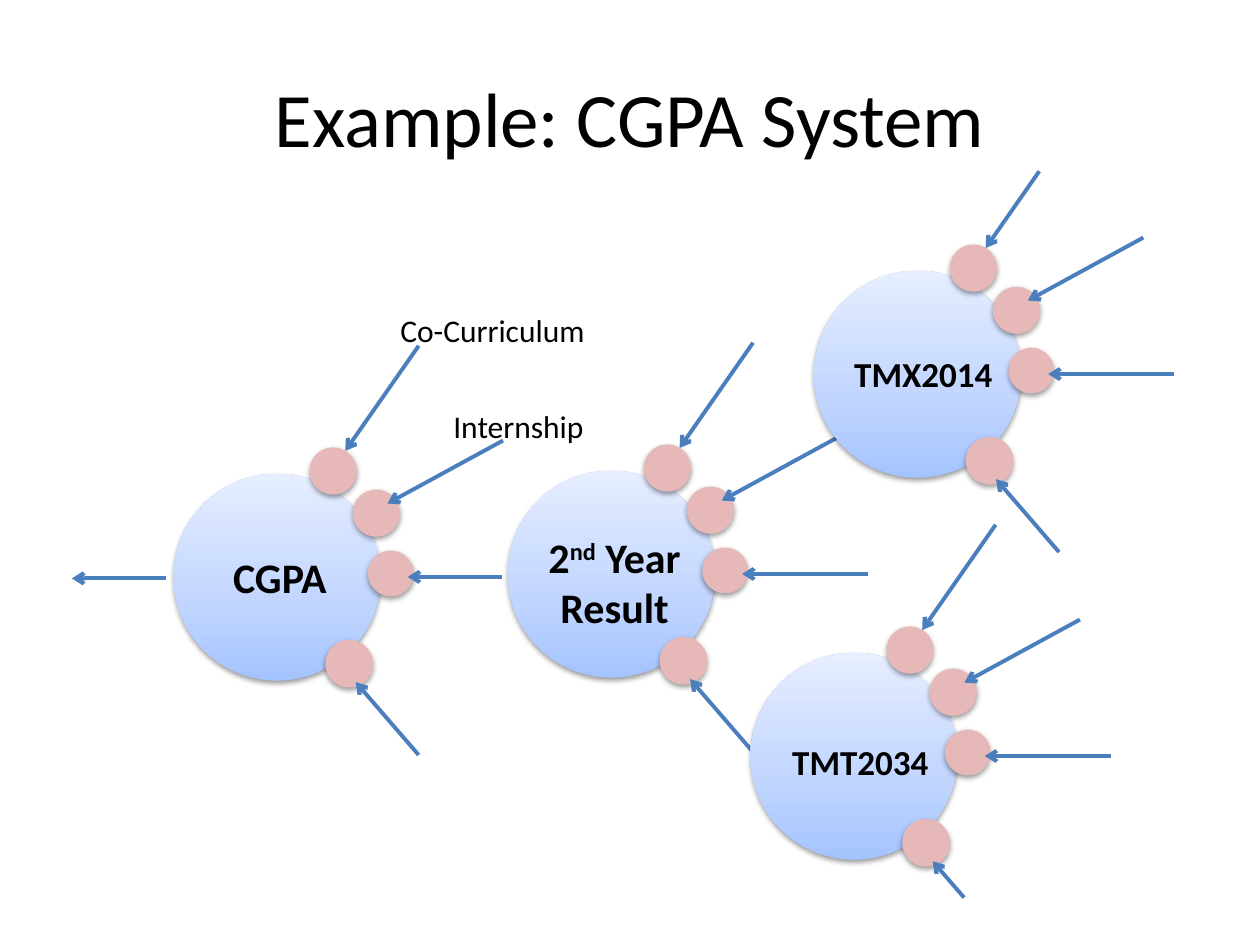
from copy import deepcopy

from lxml.etree import SubElement
from pptx import Presentation
from pptx.dml.color import RGBColor
from pptx.enum.shapes import MSO_CONNECTOR, MSO_SHAPE
from pptx.enum.text import MSO_ANCHOR, PP_ALIGN
from pptx.oxml.ns import qn
from pptx.util import Cm, Pt

COLOURS = {
    "text": "000000",
    "arrow": "4B7EBC",
    "port": "E6B9B8",
    "node_bottom": "A4C4FF",
    "node_middle": "BFD4FF",
    "node_top": "E6EEFF",
    "shadow": "000000",
}
FONT = "Calibri"
NODE_SIZE = 4.17

PORTS = [(2.74, -0.53, 0.95), (3.61, 0.32, 0.95), (3.92, 1.55, 0.92), (3.06, 3.35, 0.96)]
INPUTS = [
    ((3.46, -0.46), (1.48, -2.12)),
    ((4.31, 0.6), (2.33, -1.27)),
    ((4.72, 2.08), (2.54, 0)),
    ((3.67, 4.2), (1.27, 1.47)),
]
NODES = [
    (3.5, 9.55, (1, 1, 0.75, 1)),
    (10.24, 9.49, (1, 1, 1, 1)),
    (15.13, 13.16, (1, 1, 1, 0.5)),
    (16.41, 5.46, (0.73, 1, 1, 1)),
]
LABELS = [
    ((8.89, 8.08, 3.18, 1.02), [["Internship"]], 18, False, PP_ALIGN.LEFT),
    ((4.45, 11, 2.54, 1.27), [["CGPA"]], 24, True, PP_ALIGN.LEFT),
    ((10.59, 10.59, 3.6, 2.31), [["2", "nd", " Year"], ["Result"]], 24, True, PP_ALIGN.CENTER),
    ((16.71, 6.99, 3.81, 1.12), [["TMX2014"]], 20, True, PP_ALIGN.CENTER),
    ((15.44, 14.81, 3.81, 1.12), [["TMT2034"]], 20, True, PP_ALIGN.CENTER),
    ((7.82, 6.15, 4.45, 1.02), [["Co-Curriculum"]], 18, False, PP_ALIGN.LEFT),
]


def colour(name):
    """Return a named colour."""
    return RGBColor.from_string(COLOURS[name])


def add_span(para, text, size, bold=False):
    """Add one formatted run to a paragraph."""
    span = para.add_run()
    span.text = text
    span.font.name = FONT
    span.font.size = Pt(size)
    span.font.bold = bold
    span.font.color.rgb = colour("text")
    return span


def set_title(page, text):
    """Place and fill the title placeholder."""
    title = page.shapes.title
    title.left, title.top, title.width, title.height = Cm(1.27), Cm(0.76), Cm(22.86), Cm(3.18)
    title.text_frame.vertical_anchor = MSO_ANCHOR.MIDDLE
    para = title.text_frame.paragraphs[0]
    para.alignment = PP_ALIGN.CENTER
    add_span(para, text, 44)


def add_shadow(shape):
    """Give a shape a soft shadow straight below it."""
    shape.shadow.inherit = False
    effects = shape._element.spPr.find(qn("a:effectLst"))
    shadow = SubElement(effects, qn("a:outerShdw"), blurRad=str(Pt(3.1)), dist=str(Pt(1.6)),
                        dir="5400000", rotWithShape="0")
    tone = SubElement(shadow, qn("a:srgbClr"), val=COLOURS["shadow"])
    SubElement(tone, qn("a:alpha"), val="38000")


def add_circle(group, left, top, size):
    """Add a circle with a shadow and no outline."""
    circle = group.shapes.add_shape(MSO_SHAPE.OVAL, Cm(left), Cm(top), Cm(size), Cm(size))
    circle.line.fill.background()
    add_shadow(circle)
    return circle


def fill_node(circle):
    """Fill a node with the three-step blue gradient."""
    circle.fill.gradient()
    circle.fill.gradient_angle = 90
    stops = circle._element.spPr.find(qn("a:gradFill")).find(qn("a:gsLst"))
    stops.insert(1, deepcopy(stops[0]))
    steps = [(0, "node_bottom"), (0.35, "node_middle"), (1, "node_top")]
    for stop, (position, name) in zip(circle.fill.gradient_stops, steps):
        stop.position = position
        stop.color.rgb = colour(name)


def add_arrow(group, start, end):
    """Add a straight arrow pointing at its end."""
    arrow = group.shapes.add_connector(MSO_CONNECTOR.STRAIGHT, *map(Cm, start + end))
    arrow.line.color.rgb = colour("arrow")
    arrow.line.width = Pt(2.25)
    properties = arrow._element.spPr
    SubElement(properties.find(qn("a:ln")), qn("a:tailEnd"), type="arrow")
    SubElement(properties, qn("a:effectLst"))


def add_node(page, left, top, scales):
    """Add a grouped node with its ports and incoming arrows."""
    group = page.shapes.add_group_shape()
    fill_node(add_circle(group, left, top, NODE_SIZE))
    for across, down, size in PORTS:
        port = add_circle(group, left + across, top + down, size)
        port.fill.solid()
        port.fill.fore_color.rgb = colour("port")
    for ((across, down), (run, rise)), scale in zip(INPUTS, scales):
        end = (left + across, top + down)
        add_arrow(group, (end[0] + run * scale, end[1] + rise * scale), end)


def add_label(page, place, lines, size, bold, alignment):
    """Add a text box, raising ordinal endings."""
    box = page.shapes.add_textbox(*map(Cm, place))
    frame = box.text_frame
    frame.word_wrap = True
    for number, line in enumerate(lines):
        para = frame.add_paragraph() if number else frame.paragraphs[0]
        para.alignment = alignment
        for text in line:
            span = add_span(para, text, size, bold)
            if text == "nd":
                span._r.get_or_add_rPr().set("baseline", "30000")


def main():
    """Build the CGPA system slide."""
    deck = Presentation()
    deck.slide_width, deck.slide_height = Cm(25.4), Cm(19.05)
    page = deck.slides.add_slide(deck.slide_layouts[5])
    set_title(page, "Example: CGPA System")
    for node in NODES:
        add_node(page, *node)
    add_arrow(page, (3.35, 11.66), (1.45, 11.66))
    for label in LABELS:
        add_label(page, *label)
    deck.save("out.pptx")


if __name__ == "__main__":
    main()
